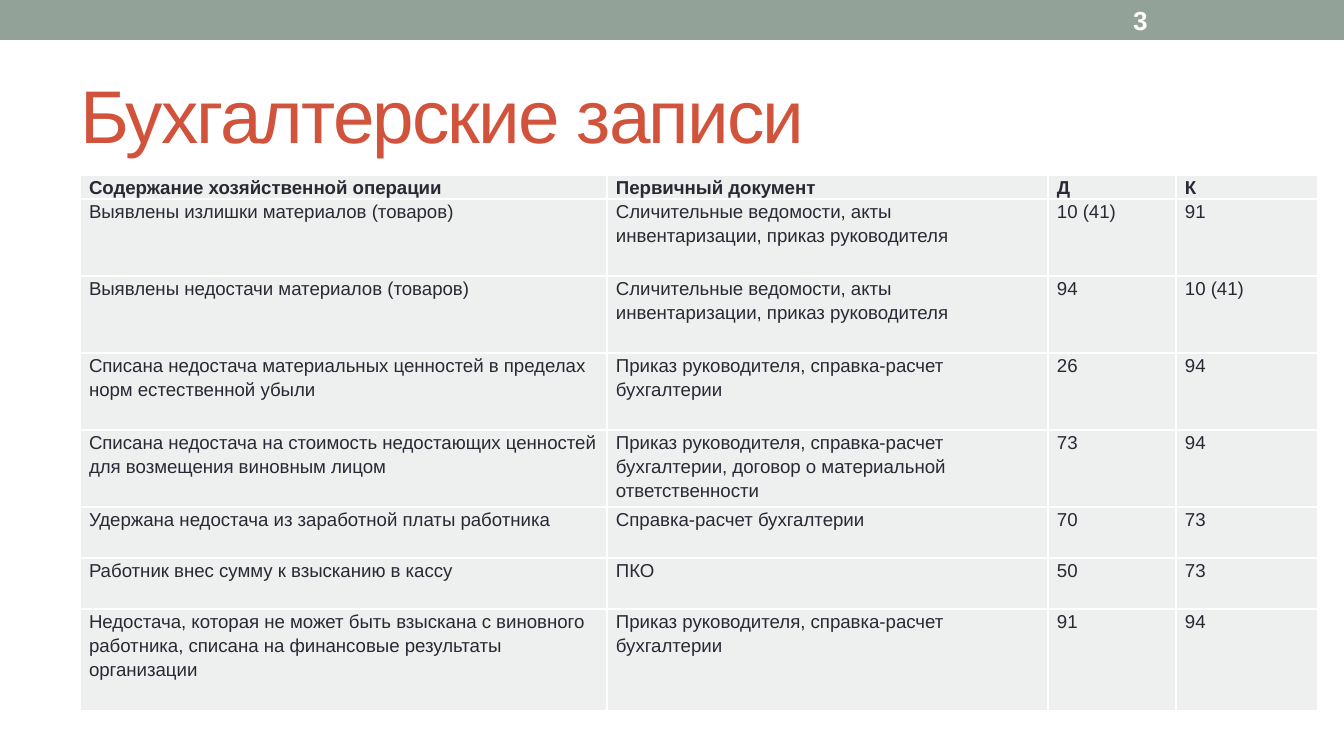
import dataclasses

import lxml.etree
import pptx
import pptx.dml.color
import pptx.enum.shapes
import pptx.enum.text
import pptx.oxml.ns
import pptx.util

SCALE = 9144000 / 1344
FONT = "Arial"
SAGE = pptx.dml.color.RGBColor(0x93, 0xA2, 0x99)
RED = pptx.dml.color.RGBColor(0xD2, 0x53, 0x3C)
INK = pptx.dml.color.RGBColor(0x29, 0x29, 0x34)
PALE = pptx.dml.color.RGBColor(0xEE, 0xF0, 0xEF)
WHITE = pptx.dml.color.RGBColor(0xFF, 0xFF, 0xFF)

COLUMNS = [527, 441, 128, 142]
ROWS = [24, 77, 77, 77, 77, 51, 51, 102]


@dataclasses.dataclass
class Label:
    text: str
    left: int
    top: int
    width: int
    height: int
    size: int
    color: pptx.dml.color.RGBColor
    bold: bool = False
    spacing: int = 0


@dataclasses.dataclass
class Entry:
    operation: str
    document: str
    debit: str
    credit: str


LABELS = [
    Label("Бухгалтерские записи", 67, 59, 1210, 109, 40, RED, spacing=-100),
    Label("3", 1120, 2, 157, 36, 14, WHITE, bold=True),
]

RECONCILIATION = "Сличительные ведомости, акты инвентаризации, приказ руководителя"
ORDER = "Приказ руководителя, справка-расчет бухгалтерии"
ENTRIES = [
    Entry("Содержание хозяйственной операции", "Первичный документ", "Д", "К"),
    Entry("Выявлены излишки материалов (товаров)", RECONCILIATION, "10 (41)", "91"),
    Entry("Выявлены недостачи материалов (товаров)", RECONCILIATION, "94", "10 (41)"),
    Entry("Списана недостача материальных ценностей в пределах норм естественной убыли",
          ORDER, "26", "94"),
    Entry("Списана недостача на стоимость недостающих ценностей для возмещения виновным лицом",
          ORDER + ", договор о материальной ответственности", "73", "94"),
    Entry("Удержана недостача из заработной платы работника",
          "Справка-расчет бухгалтерии", "70", "73"),
    Entry("Работник внес сумму к взысканию в кассу", "ПКО", "50", "73"),
    Entry("Недостача, которая не может быть взыскана с виновного работника, "
          "списана на финансовые результаты организации", ORDER, "91", "94"),
]


def px(n: int) -> pptx.util.Emu:
    return pptx.util.Emu(round(n * SCALE))


def format_run(r, size: int, color: pptx.dml.color.RGBColor, bold: bool) -> None:
    r.font.name = FONT
    r.font.size = pptx.util.Pt(size)
    r.font.bold = bold
    r.font.color.rgb = color


def add_label(s, label: Label) -> None:
    sp = s.shapes.add_textbox(px(label.left), px(label.top), px(label.width), px(label.height))
    tf = sp.text_frame
    tf.word_wrap = True
    tf.vertical_anchor = pptx.enum.text.MSO_ANCHOR.MIDDLE
    tf.text = label.text
    r = tf.paragraphs[0].runs[0]
    format_run(r, label.size, label.color, label.bold)
    if label.spacing:
        r.font._element.set("spc", str(label.spacing))


def add_borders(cell) -> None:
    qn = pptx.oxml.ns.qn
    tc_pr = cell._tc.get_or_add_tcPr()
    for side in ("lnL", "lnR", "lnT", "lnB"):
        ln = lxml.etree.SubElement(tc_pr, qn(f"a:{side}"), w=str(pptx.util.Pt(1)))
        fill = lxml.etree.SubElement(ln, qn("a:solidFill"))
        lxml.etree.SubElement(fill, qn("a:srgbClr"), val=str(WHITE))


def fill_cell(cell, text: str, bold: bool) -> None:
    cell.margin_left = cell.margin_right = px(9)
    cell.margin_top = cell.margin_bottom = 0
    add_borders(cell)
    cell.fill.solid()
    cell.fill.fore_color.rgb = PALE
    p = cell.text_frame.paragraphs[0]
    p.text = text
    p.line_spacing = 1.15
    format_run(p.runs[0], 10, INK, bold)


def add_entries(s, entries: list[Entry]) -> None:
    table = s.shapes.add_table(len(ROWS), len(COLUMNS), px(80), px(175),
                               px(sum(COLUMNS)), px(sum(ROWS))).table
    table.first_row = False
    table.horz_banding = False
    for column, width in zip(table.columns, COLUMNS):
        column.width = px(width)
    for i, (row, height, entry) in enumerate(zip(table.rows, ROWS, entries)):
        row.height = px(height)
        for cell, text in zip(row.cells, dataclasses.astuple(entry)):
            fill_cell(cell, text, bold=i == 0)


def main() -> None:
    prs = pptx.Presentation()
    prs.slide_width, prs.slide_height = px(1344), px(756)
    s = prs.slides.add_slide(prs.slide_layouts[6])
    band = s.shapes.add_shape(pptx.enum.shapes.MSO_SHAPE.RECTANGLE, 0, 0, px(1344), px(40))
    band.shadow.inherit = False
    band.fill.solid()
    band.fill.fore_color.rgb = SAGE
    band.line.fill.background()
    add_entries(s, ENTRIES)
    for label in LABELS:
        add_label(s, label)
    prs.save("out.pptx")


if __name__ == "__main__":
    main()
